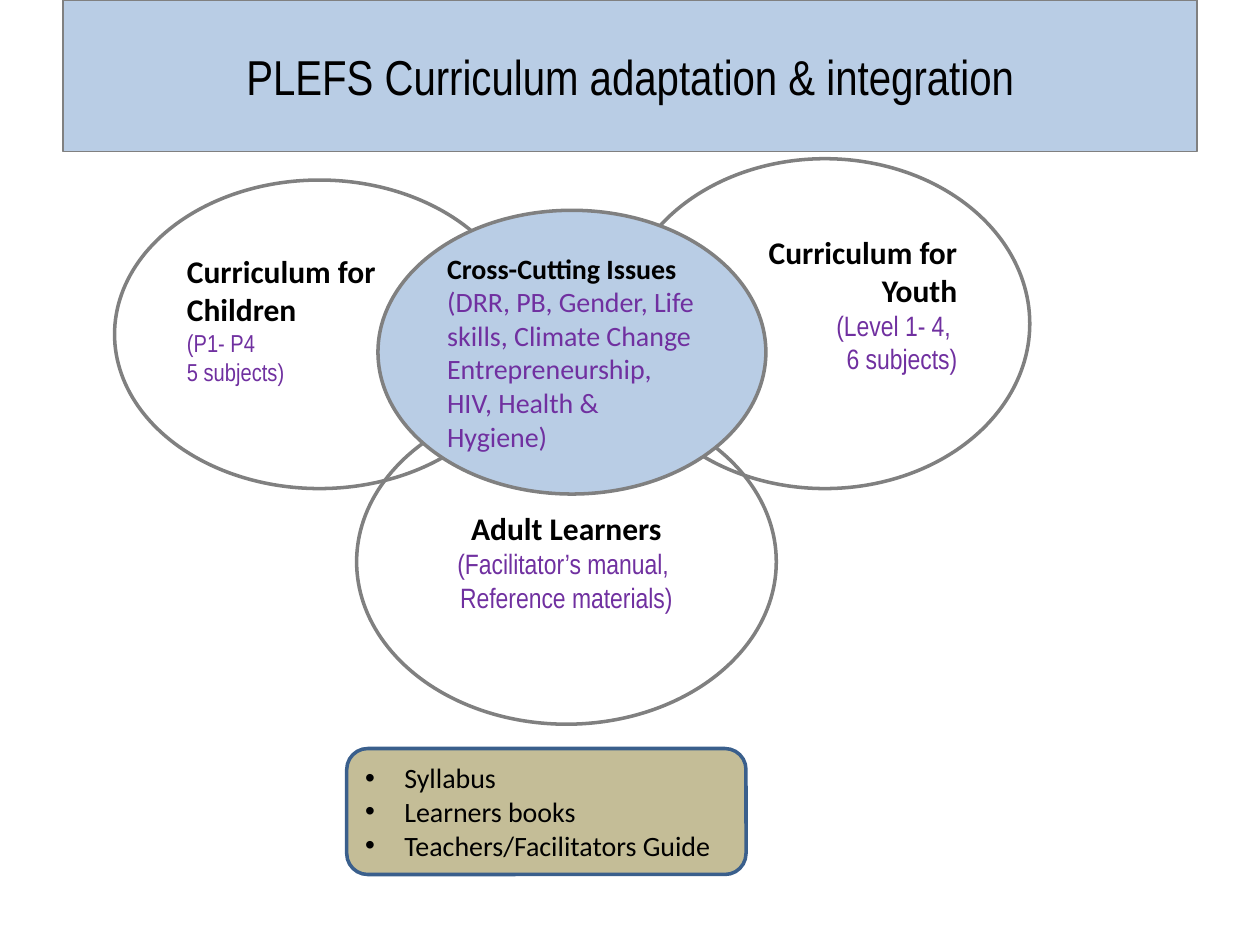
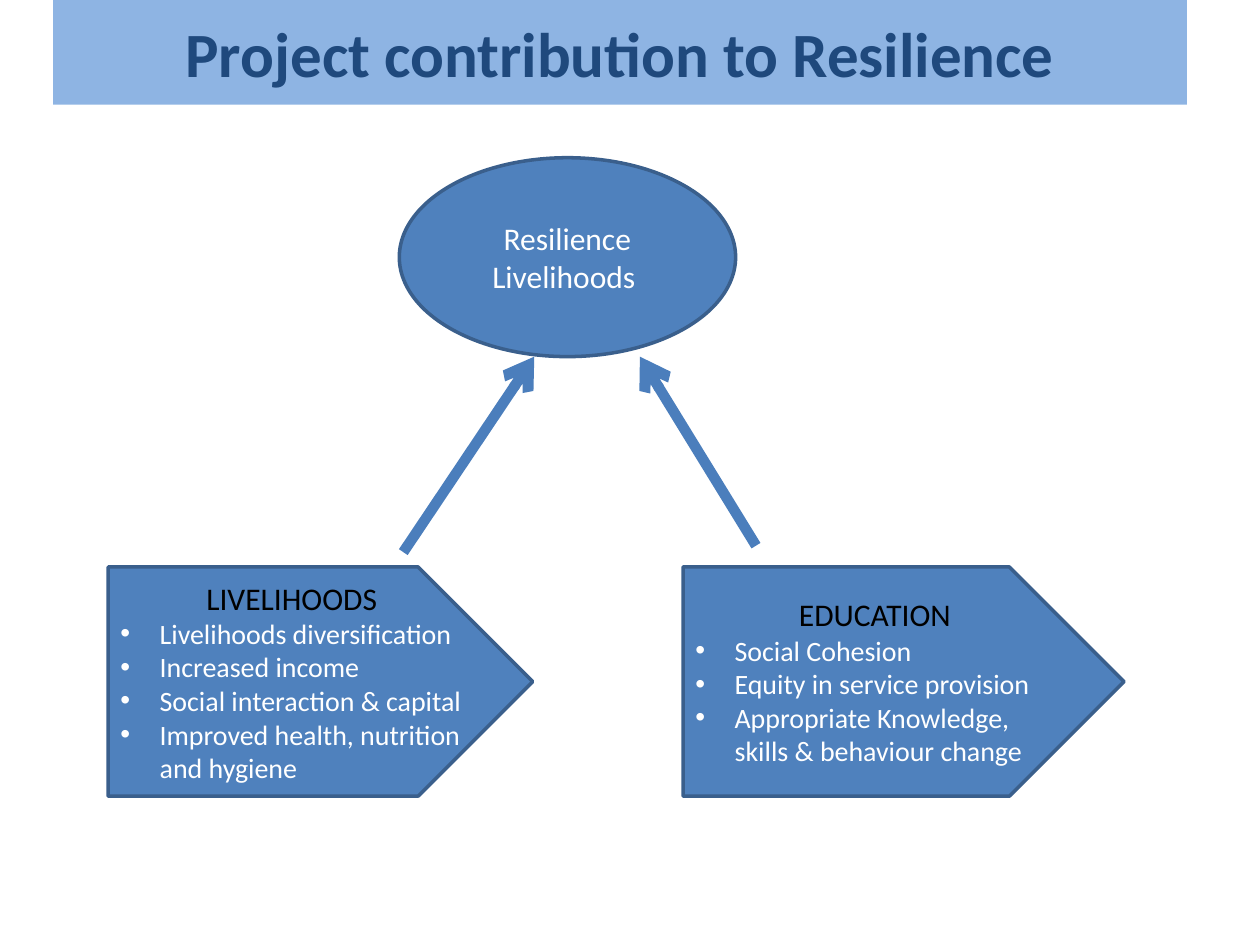
from lxml import etree
from pptx import Presentation
from pptx.dml.color import RGBColor
from pptx.enum import shapes, text
from pptx.oxml import ns
from pptx.util import Cm, Pt

BLACK = RGBColor(0x00, 0x00, 0x00)
WHITE = RGBColor(0xFF, 0xFF, 0xFF)
GREY = RGBColor(0x80, 0x80, 0x80)
PURPLE = RGBColor(0x70, 0x30, 0xA0)
PALE_BLUE = RGBColor(0xB9, 0xCD, 0xE5)
SKY_BLUE = RGBColor(0x8E, 0xB4, 0xE3)
BLUE = RGBColor(0x4F, 0x81, 0xBD)
ARROW_BLUE = RGBColor(0x4B, 0x7E, 0xBC)
EDGE_BLUE = RGBColor(0x3A, 0x5F, 0x8C)
NAVY = RGBColor(0x1F, 0x49, 0x7D)
TAN = RGBColor(0xC4, 0xBD, 0x97)

SANS = "Calibri"
NARROW = "Arial Narrow"
LEFT, CENTER, RIGHT = text.PP_ALIGN.LEFT, text.PP_ALIGN.CENTER, text.PP_ALIGN.RIGHT
OVAL = shapes.MSO_SHAPE.OVAL


def line_of(words, size, color, font=SANS, bold=False, align=LEFT, bullet=False):
    return dict(words=words, size=size, color=color, font=font,
                bold=bold, align=align, bullet=bullet)


def bullets(items, color):
    return [line_of(item, 16, color, bullet=True) for item in items]


class Deck:
    def __init__(self):
        self.show = Presentation()
        self.show.slide_width = Cm(25.4)
        self.show.slide_height = Cm(19.05)
        self.slide = None

    def new_slide(self):
        self.slide = self.show.slides.add_slide(self.show.slide_layouts[6])

    def block(self, kind, place, lines, fill=None, edge=None, weight=2, lift=0):
        outline = self.slide.shapes.add_shape(kind, *map(Cm, place))
        outline.shadow.inherit = False
        if fill is None:
            outline.fill.background()
        else:
            outline.fill.solid()
            outline.fill.fore_color.rgb = fill
        if edge is None:
            outline.line.fill.background()
        else:
            outline.line.color.rgb = edge
            outline.line.width = Pt(weight)
        frame = outline.text_frame
        frame.word_wrap = True
        frame.vertical_anchor = text.MSO_ANCHOR.MIDDLE
        frame.margin_bottom = Cm(0.13 + 2 * lift)
        frame.text = "\n".join(line["words"] for line in lines)
        for paragraph, line in zip(frame.paragraphs, lines):
            self.format_line(paragraph, line)

    def format_line(self, paragraph, line):
        paragraph.alignment = line["align"]
        if line["bullet"]:
            properties = paragraph._p.get_or_add_pPr()
            properties.set("marL", str(Cm(0.79)))
            properties.set("indent", str(-Cm(0.79)))
            etree.SubElement(properties, ns.qn("a:buFont"), typeface="Arial")
            etree.SubElement(properties, ns.qn("a:buChar"), char="•")
        for run in paragraph.runs:
            run.font.name = line["font"]
            run.font.size = Pt(line["size"])
            run.font.bold = line["bold"]
            run.font.color.rgb = line["color"]

    def title(self, words, left, height, fill, size, color, font, bold=False, edge=None):
        heading = line_of(words, size, color, font, bold, CENTER)
        self.block(shapes.MSO_SHAPE.RECTANGLE, (left, 0, 22.86, height),
                   [heading], fill, edge, 0.75)

    def circle(self, place, heading, details, size, font=NARROW, align=LEFT,
               heading_size=18, fill=None, lift=0):
        lines = [line_of(heading, heading_size, BLACK, bold=True, align=align)]
        lines += [line_of(detail, size, PURPLE, font, align=align) for detail in details]
        self.block(OVAL, place, lines, fill, GREY, lift=lift)

    def pillar(self, left, width, heading, items):
        lines = [line_of(heading, 18, BLACK, align=CENTER)] + bullets(items, WHITE)
        self.block(shapes.MSO_SHAPE.PENTAGON, (left, 11.43, width, 4.62),
                   lines, BLUE, EDGE_BLUE)

    def arrow(self, *ends):
        link = self.slide.shapes.add_connector(
            shapes.MSO_CONNECTOR.STRAIGHT, *map(Cm, ends))
        link.line.color.rgb = ARROW_BLUE
        link.line.width = Pt(6)
        etree.SubElement(link.line._get_or_add_ln(), ns.qn("a:tailEnd"), type="arrow")
        etree.SubElement(link._element.spPr, ns.qn("a:effectLst"))


def curriculum(deck):
    deck.new_slide()
    deck.title("PLEFS Curriculum adaptation & integration", 1.27, 3.05,
               PALE_BLUE, 28, BLACK, NARROW, edge=GREY)
    deck.circle((2.31, 3.63, 8.26, 6.22), "Curriculum for Children",
                ["(P1- P4", "5 subjects)"], 14, lift=0.3)
    deck.circle((12.5, 3.2, 8.26, 6.65), "Curriculum for Youth",
                ["(Level 1- 4, ", "6 subjects)"], 16, align=RIGHT, lift=0.39)
    deck.circle((7.19, 8.05, 8.46, 6.55), "Adult Learners",
                ["(Facilitator’s manual, ", "Reference materials)"], 16, align=CENTER)
    deck.circle((7.62, 4.24, 7.82, 5.72), "Cross-Cutting Issues",
                ["(DRR, PB, Gender, Life skills, Climate Change "
                 "Entrepreneurship, HIV, Health & Hygiene)"],
                16, SANS, heading_size=16, fill=PALE_BLUE)
    materials = ["Syllabus", "Learners books", "Teachers/Facilitators Guide"]
    deck.block(shapes.MSO_SHAPE.ROUNDED_RECTANGLE, (6.99, 15.09, 8.05, 2.54),
               bullets(materials, BLACK), TAN, EDGE_BLUE)


def resilience(deck):
    deck.new_slide()
    deck.title("Project contribution to Resilience", 1.07, 2.11,
               SKY_BLUE, 36, NAVY, SANS, bold=True)
    deck.block(OVAL, (8.05, 3.18, 6.78, 4.01),
               [line_of("Resilience Livelihoods ", 18, WHITE, align=CENTER)],
               BLUE, EDGE_BLUE)
    deck.pillar(2.18, 8.56, "LIVELIHOODS",
                ["Livelihoods diversification", "Increased income",
                 "Social interaction & capital",
                 "Improved health, nutrition and hygiene"])
    deck.pillar(13.77, 8.89, "EDUCATION",
                ["Social Cohesion", "Equity in service provision",
                 "Appropriate Knowledge, skills & behaviour change"])
    deck.arrow(8.13, 11.13, 10.77, 7.19)
    deck.arrow(15.24, 11, 12.9, 7.19)


def main():
    deck = Deck()
    curriculum(deck)
    resilience(deck)
    deck.show.save("out.pptx")


if __name__ == "__main__":
    main()
